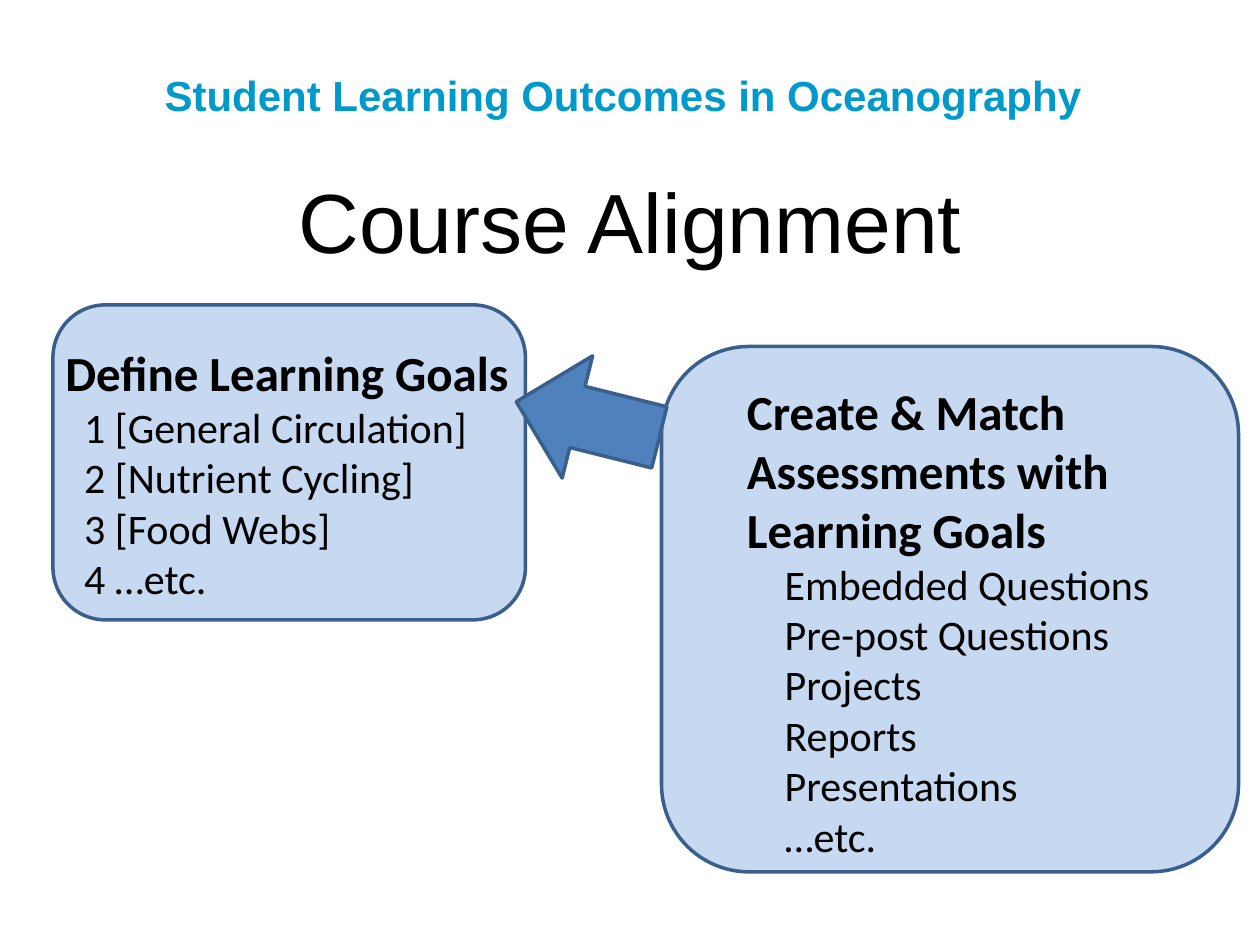
from pptx import Presentation
from pptx.dml.color import RGBColor
from pptx.enum.shapes import MSO_SHAPE
from pptx.enum.text import MSO_ANCHOR, PP_ALIGN
from pptx.util import Inches, Pt

COLORS = {
    "text": "000000",
    "course": "0099CC",
    "panel": "C6D9F1",
    "arrow": "4F81BD",
    "outline": "3A5F8C",
}


def color(name):
    """Return the named palette colour."""
    return RGBColor.from_string(COLORS[name])


def add_block(slide, kind, box, fill, rotation=0):
    """Add an outlined preset shape."""
    block = slide.shapes.add_shape(kind, *map(Inches, box))
    block.shadow.inherit = False
    block.fill.solid()
    block.fill.fore_color.rgb = color(fill)
    block.line.color.rgb = color("outline")
    block.line.width = Pt(2)
    block.rotation = rotation


def add_frame(slide, box, anchor=MSO_ANCHOR.TOP, wrap=True):
    """Add an empty text box and return its text frame."""
    frame = slide.shapes.add_textbox(*map(Inches, box)).text_frame
    frame.word_wrap = wrap
    frame.vertical_anchor = anchor
    return frame


def write(paragraph, words, size, font, bold=False, ink="text"):
    """Add one formatted run to a paragraph."""
    run = paragraph.add_run()
    run.text = words
    run.font.size = Pt(size)
    run.font.name = font
    run.font.bold = bold
    run.font.color.rgb = color(ink)


def add_heading(slide, box, words, size, **style):
    """Add a centred, one-line heading."""
    frame = add_frame(slide, box, MSO_ANCHOR.MIDDLE, wrap=False)
    heading = frame.paragraphs[0]
    heading.alignment = PP_ALIGN.CENTER
    write(heading, words, size, "Arial", **style)


def add_step(slide, panel_box, text_box, heading_lines, items, indent):
    """Add a rounded panel with a bold heading and indented items."""
    add_block(slide, MSO_SHAPE.ROUNDED_RECTANGLE, panel_box, "panel")
    frame = add_frame(slide, text_box)
    for index, words in enumerate(heading_lines + items):
        line = frame.add_paragraph() if index else frame.paragraphs[0]
        if index < len(heading_lines):
            write(line, words, 28, "Calibri", bold=True)
        else:
            line._p.get_or_add_pPr().set("marL", str(Inches(indent)))
            write(line, words, 24, "Calibri")


def main():
    """Build the course alignment slide."""
    deck = Presentation()
    deck.slide_width, deck.slide_height = Inches(10), Inches(7.5)
    slide = deck.slides.add_slide(deck.slide_layouts[6])

    add_heading(slide, (0.75, 0.83, 8.5, 1.83), "Course Alignment", 48)
    add_heading(slide, (1.17, 0.5, 7.55, 0.5),
                "Student Learning Outcomes in Oceanography", 24,
                bold=True, ink="course")

    add_step(slide, (0.42, 2.42, 3.75, 2.5), (0.42, 2.67, 3.83, 2.49),
             ["Define Learning Goals"],
             ["1 [General Circulation]", "2 [Nutrient Cycling]",
              "3 [Food Webs]", "4 …etc."], 0.15)
    add_step(slide, (5.25, 2.75, 4.58, 4.17), (5.83, 2.98, 4.17, 3.94),
             ["Create & Match", "Assessments with", "Learning Goals"],
             ["Embedded Questions", "Pre-post Questions", "Projects",
              "Reports", "Presentations", "…etc."], 0.3)
    add_block(slide, MSO_SHAPE.LEFT_ARROW, (4.08, 2.83, 1.17, 1), "arrow", 14)

    deck.save("out.pptx")


if __name__ == "__main__":
    main()
